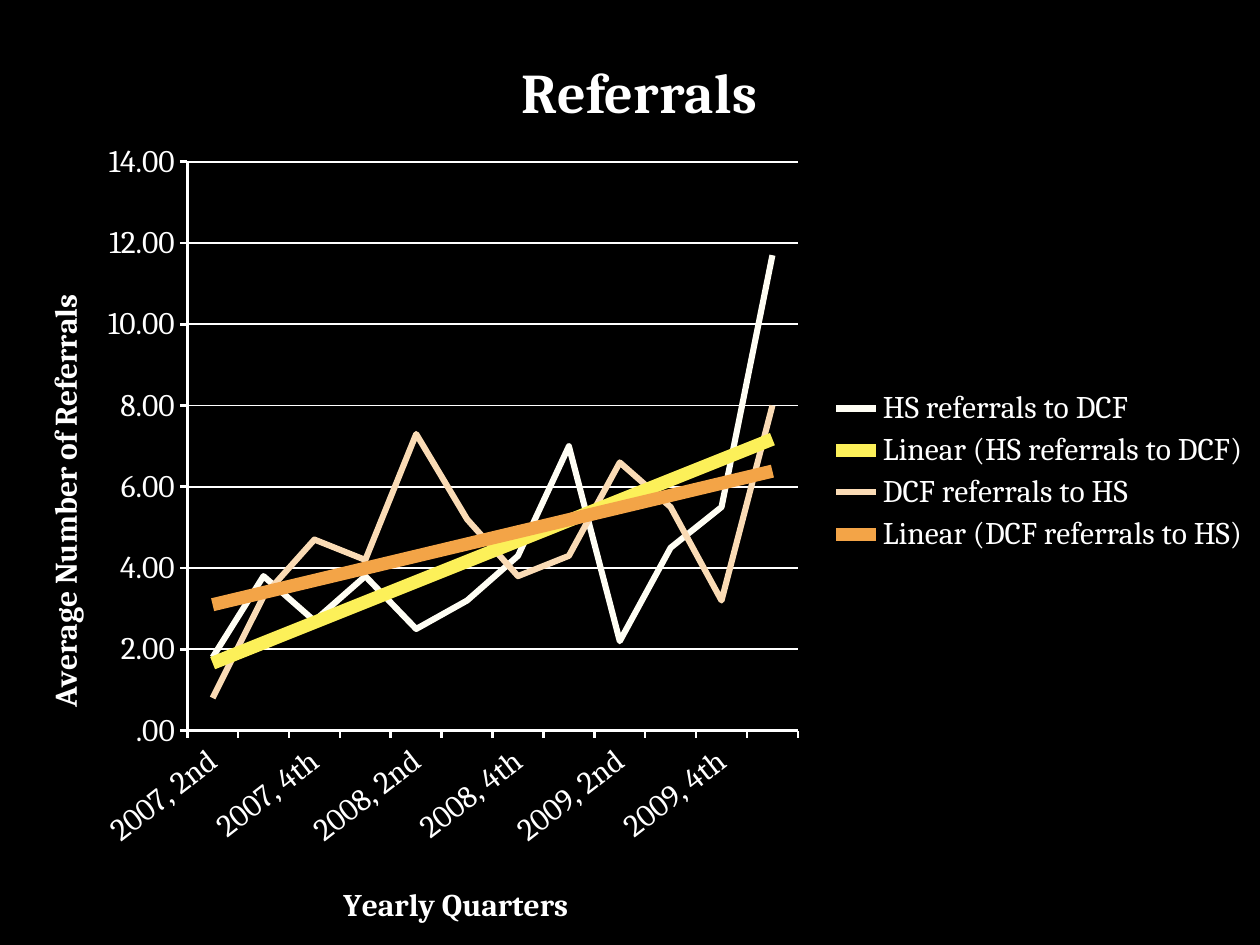
"""Build a slide with a line chart of quarterly referrals and linear trends."""
from lxml.etree import SubElement
from pptx import Presentation
from pptx.chart.data import CategoryChartData
from pptx.dml.color import RGBColor
from pptx.enum.chart import XL_CHART_TYPE as CT, XL_LEGEND_POSITION as LP, XL_TICK_MARK as TM
from pptx.oxml import parse_xml
from pptx.oxml.ns import nsdecls, qn
from pptx.util import Pt

BLACK = RGBColor(0, 0, 0)
WHITE = RGBColor(255, 255, 255)
FONT = "Cambria"
SLIDE_W, SLIDE_H = 720, 540

QUARTERS = ["2007, 2nd", "2007, 3rd", "2007, 4th", "2008, 1st", "2008, 2nd", "2008, 3rd",
            "2008, 4th", "2009, 1st", "2009, 2nd", "2009, 3rd", "2009, 4th", "2010, 1st"]
SERIES = [
    ("HS referrals to DCF", RGBColor(0xFF, 0xFE, 0xF4), RGBColor(0xFC, 0xF0, 0x59),
     [1.8, 3.8, 2.7, 3.8, 2.5, 3.2, 4.3, 7, 2.2, 4.5, 5.5, 11.7]),
    ("DCF referrals to HS", RGBColor(0xFA, 0xDB, 0xB5), RGBColor(0xF3, 0xA4, 0x47),
     [0.8, 3.3, 4.7, 4.2, 7.3, 5.2, 3.8, 4.3, 6.6, 5.5, 3.2, 8]),
]
TITLE_AT = (292, 26)
X_TITLE_AT = (193, 502)
Y_TITLE_AT = (22, 165)
PLOT_AT = (107, 92.5, 349, 325)
LEGEND_AT = (473, 220, 242, 99)


def style_font(font, size=18, bold=False, color=WHITE):
    font.name, font.size, font.bold = FONT, Pt(size), bold
    font.color.rgb = color


def style_line(line, color=WHITE, width=1.5):
    line.color.rgb, line.width = color, Pt(width)


def place(el, at, inner=False):
    for old in el.findall(qn("c:layout")):
        el.remove(old)
    layout = parse_xml(f"<c:layout {nsdecls('c')}><c:manualLayout/></c:layout>")
    values = [("layoutTarget", "inner")] if inner else []
    values += [("xMode", "edge"), ("yMode", "edge")]
    sizes = (SLIDE_W, SLIDE_H, SLIDE_W, SLIDE_H)
    values += [(k, f"{v / s:.4f}") for k, v, s in zip("xywh", at, sizes)]
    for key, value in values:
        SubElement(layout[0], qn(f"c:{key}")).set("val", value)
    overlay = el.find(qn("c:overlay"))
    el.insert(0 if overlay is None else el.index(overlay), layout)


def add_title(owner, text, at, **fmt):
    title = owner.chart_title if hasattr(owner, "chart_title") else owner.axis_title
    p = title.text_frame.paragraphs[0]
    r = p.add_run()
    r.text = text
    style_font(r.font, bold=True, **fmt)
    place(title._element, at)


def add_trend(series, color, width=7.5):
    trend = parse_xml(
        f'<c:trendline {nsdecls("c", "a")}><c:spPr><a:ln w="{Pt(width)}"><a:solidFill>'
        f'<a:srgbClr val="{color}"/></a:solidFill></a:ln></c:spPr>'
        '<c:trendlineType val="linear"/><c:dispRSqr val="0"/><c:dispEq val="0"/></c:trendline>')
    series._element.find(qn("c:cat")).addprevious(trend)


def build_chart(slide):
    data = CategoryChartData(number_format="####.00")
    data.categories = QUARTERS
    for name, _, _, values in SERIES:
        data.add_series(name, values)
    chart = slide.shapes.add_chart(CT.LINE, 0, 0, Pt(SLIDE_W), Pt(SLIDE_H), data).chart
    style_font(chart.font, 10)
    add_title(chart, "Referrals", TITLE_AT, size=32)

    x_axis, y_axis = chart.category_axis, chart.value_axis
    add_title(x_axis, "Yearly Quarters", X_TITLE_AT)
    add_title(y_axis, "Average Number of Referrals", Y_TITLE_AT)
    for axis in (x_axis, y_axis):
        style_font(axis.tick_labels.font)
        style_line(axis.format.line)
        axis.major_tick_mark, axis.minor_tick_mark = TM.OUTSIDE, TM.NONE
    x_axis._element.find(qn("c:txPr")).find(qn("a:bodyPr")).set("rot", str(-38 * 60000))
    y_axis.minimum_scale, y_axis.maximum_scale, y_axis.major_unit = 0, 14, 2
    y_axis.tick_labels.number_format = "####.00"
    y_axis.tick_labels.number_format_is_linked = False
    style_line(y_axis.major_gridlines.format.line, width=1)

    for series, (_, color, trend_color, _) in zip(chart.plots[0].series, SERIES):
        series.smooth = False
        style_line(series.format.line, color, 3.5)
        add_trend(series, trend_color)
    place(chart._chartSpace.chart.plotArea, PLOT_AT, inner=True)

    chart.has_legend = True
    chart.legend.position = LP.RIGHT
    chart.legend.include_in_layout = False
    style_font(chart.legend.font)
    place(chart.legend._element, LEGEND_AT)


def main():
    prs = Presentation()
    prs.slide_width, prs.slide_height = Pt(SLIDE_W), Pt(SLIDE_H)
    slide = prs.slides.add_slide(prs.slide_layouts[6])
    slide.background.fill.solid()
    slide.background.fill.fore_color.rgb = BLACK
    build_chart(slide)
    prs.save("out.pptx")


if __name__ == "__main__":
    main()
